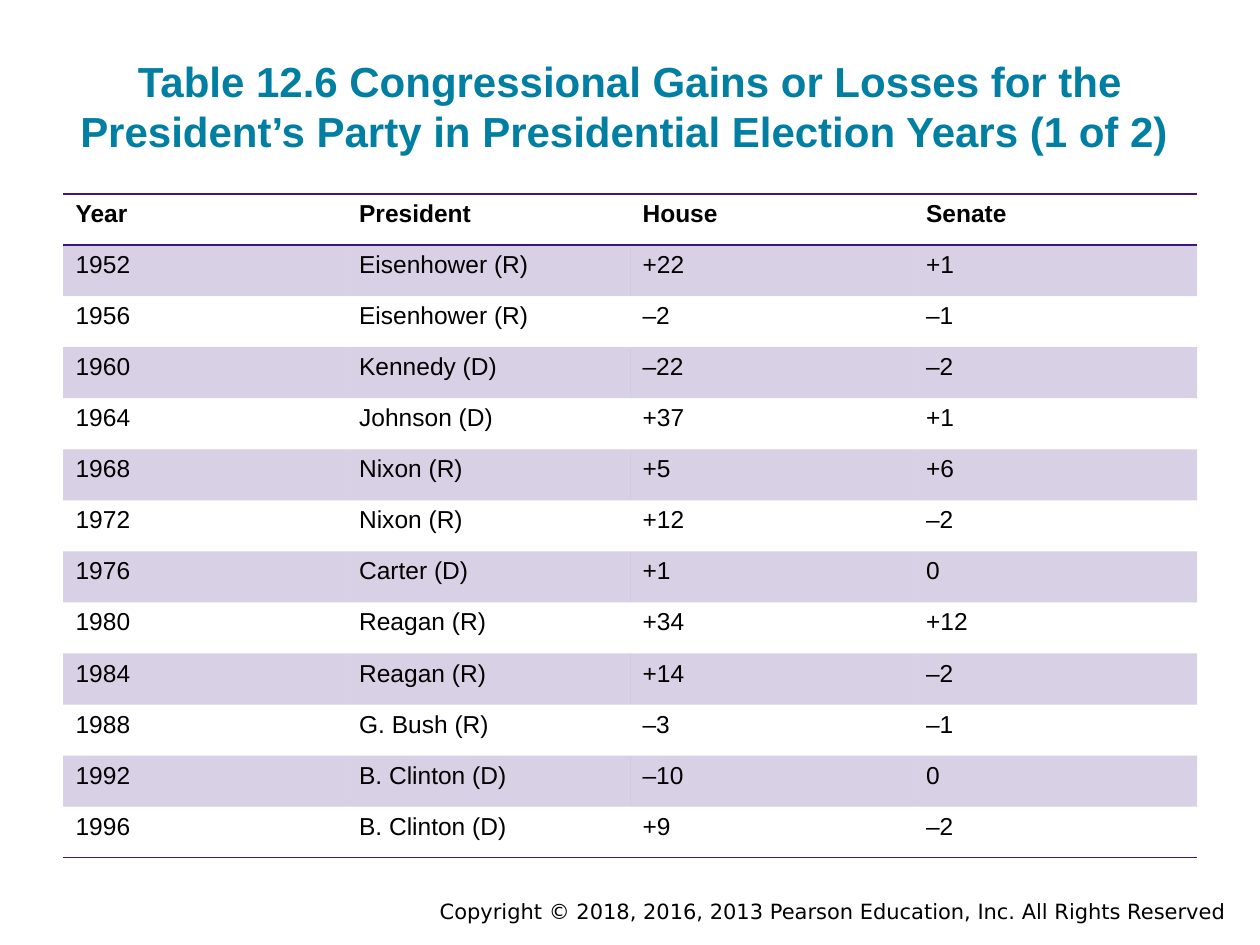
from pptx import Presentation, util as u
from pptx.dml.color import RGBColor
from pptx.enum import text
from pptx.oxml import parse_xml
from pptx.oxml.ns import nsdecls, qn

W, H = 10, 7.5
PURPLE, TEAL, BLACK = "3C1581", "007FA3", "000000"
NO_STYLE = "{2D5ABB26-0587-4C30-8999-92F81FD0307C}"
ROWS = [
    ("Year", "President", "House", "Senate"),
    ("1952", "Eisenhower (R)", "+22", "+1"),
    ("1956", "Eisenhower (R)", "–2", "–1"),
    ("1960", "Kennedy (D)", "–22", "–2"),
    ("1964", "Johnson (D)", "+37", "+1"),
    ("1968", "Nixon (R)", "+5", "+6"),
    ("1972", "Nixon (R)", "+12", "–2"),
    ("1976", "Carter (D)", "+1", "0"),
    ("1980", "Reagan (R)", "+34", "+12"),
    ("1984", "Reagan (R)", "+14", "–2"),
    ("1988", "G. Bush (R)", "–3", "–1"),
    ("1992", "B. Clinton (D)", "–10", "0"),
    ("1996", "B. Clinton (D)", "+9", "–2"),
]


def color(hex_code):
    return RGBColor.from_string(hex_code)


def share(x, y, w, h):
    """Turn shares of the slide's size into lengths."""
    return [u.Inches(v) for v in (x * W, y * H, w * W, h * H)]


def set_font(p, size, hex_code, name="Arial", bold=False):
    f = p.font
    f.name, f.size, f.bold = name, u.Pt(size), bold
    f.color.rgb = color(hex_code)


def add_text(s, box, words, align, anchor, inset, **font):
    tf = s.shapes.add_textbox(*share(*box)).text_frame
    tf.word_wrap = True
    tf.vertical_anchor = anchor
    tf.margin_top = tf.margin_bottom = u.Inches(inset)
    p = tf.paragraphs[0]
    p.text, p.alignment = words, align
    set_font(p, **font)


def add_border(cell, side):
    """Draw a rule on the cell's side: lnT or lnB, in that order, before any fill."""
    cell._tc.get_or_add_tcPr().append(parse_xml(
        f'<a:{side} {nsdecls("a")} w="{u.Pt(1)}"><a:solidFill>'
        f'<a:srgbClr val="{PURPLE}"/></a:solidFill></a:{side}>'))


def shade(cell, alpha):
    cell.fill.solid()
    cell.fill.fore_color.rgb = color(PURPLE)
    clr = cell._tc.tcPr.find(".//" + qn("a:solidFill") + "/" + qn("a:srgbClr"))
    clr.append(parse_xml(f'<a:alpha {nsdecls("a")} val="{alpha * 1000}"/>'))


def add_results(s, box):
    n, last = len(ROWS), len(ROWS) - 1
    table = s.shapes.add_table(n, len(ROWS[0]), *share(*box)).table
    table.horz_banding = False
    table._tbl.tblPr.find(qn("a:tableStyleId")).text = NO_STYLE
    for i, row in enumerate(ROWS):
        table.rows[i].height = u.Inches(box[3] * H / n)
        for j, words in enumerate(row):
            cell = table.cell(i, j)
            p = cell.text_frame.paragraphs[0]
            p.text = words
            set_font(p, 14, BLACK, bold=i == 0)
            if i == 0:
                add_border(cell, "lnT")
            if i in (0, last):
                add_border(cell, "lnB")
            if i % 2:
                shade(cell, 20)
            else:
                cell.fill.background()


def main():
    prs = Presentation()
    prs.slide_width, prs.slide_height = u.Inches(W), u.Inches(H)
    s = prs.slides.add_slide(prs.slide_layouts[6])
    align, anchor = text.PP_ALIGN, text.MSO_ANCHOR
    add_text(s, (0.2, 7.08 / H, 0.783, 0.04),
             "Copyright © 2018, 2016, 2013 Pearson Education, Inc. All Rights Reserved",
             align.RIGHT, anchor.TOP, 0.05, size=12, hex_code=BLACK, name="DejaVu Sans")
    add_text(s, (0.05, 0.24 / H, 0.9, 1.1 / H),
             "Table 12.6 Congressional Gains or Losses for the "
             "President’s Party in Presidential Election Years (1 of 2) ",
             align.CENTER, anchor.BOTTOM, 0.1, size=24, hex_code=TEAL, bold=True)
    add_results(s, (0.05, 1.54 / H, 0.9, 5.27 / H))
    prs.save("out.pptx")


if __name__ == "__main__":
    main()
